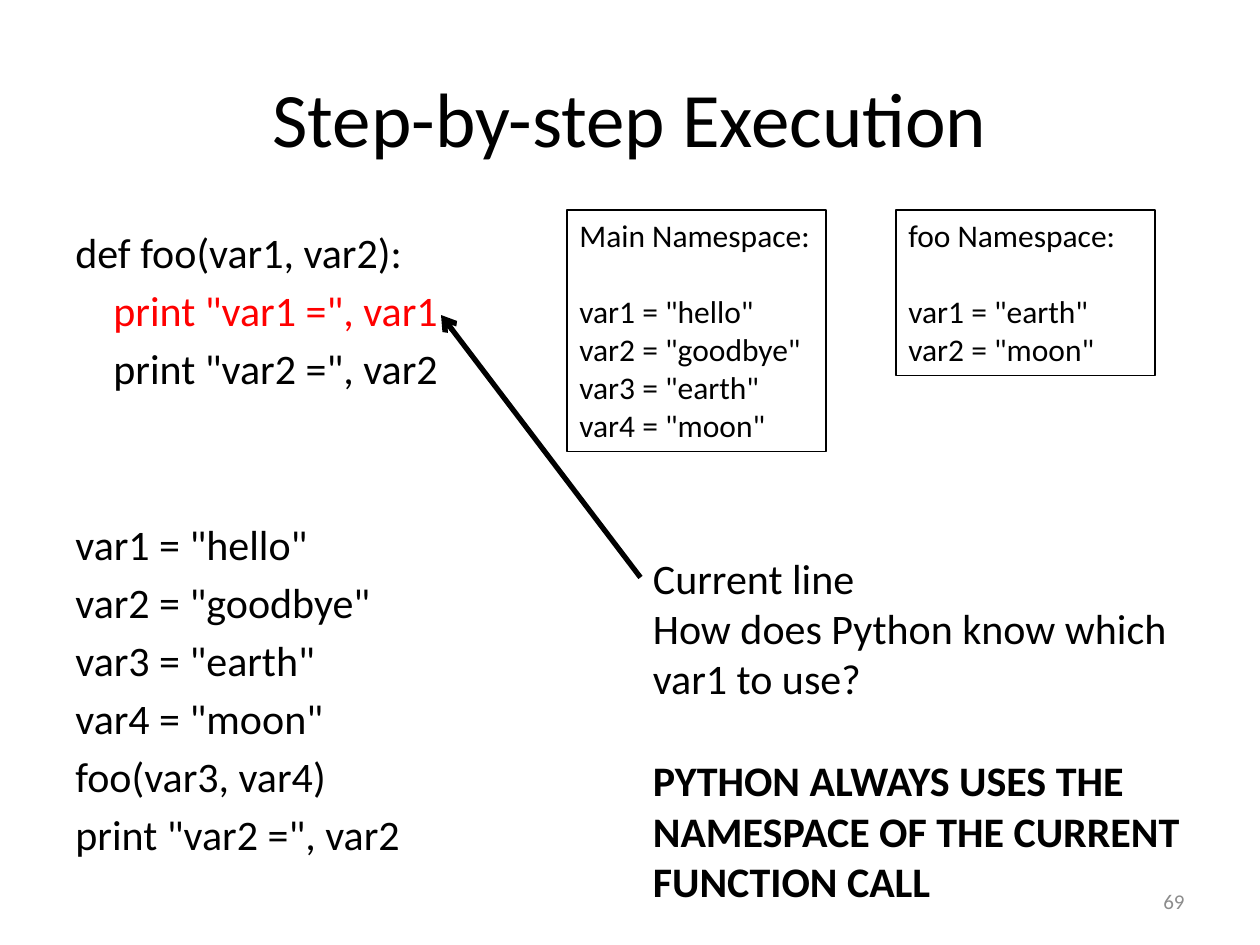
from lxml.etree import SubElement
from pptx import Presentation
from pptx.dml.color import RGBColor
from pptx.enum.shapes import MSO_CONNECTOR, MSO_SHAPE
from pptx.enum.text import MSO_ANCHOR, MSO_AUTO_SIZE, PP_ALIGN
from pptx.oxml.ns import qn
from pptx.util import Pt

COLOURS = {"text": "000000", "current": "FF0000", "number": "8C8C8C"}
FONT = "Calibri"
CODE_INDENT = 21.7
CODE_GAP = 4.4
SECTION_GAP = 71.3


def colour(name):
    return RGBColor.from_string(COLOURS[name])


def add_span(para, text, size, name="text", bold=False):
    span = para.add_run()
    span.text = text
    span.font.name = FONT
    span.font.size = Pt(size)
    span.font.bold = bold
    span.font.color.rgb = colour(name)


def add_para(frame, lines, size, gap=0, indent=0, name="text", bold=False,
             align=PP_ALIGN.LEFT):
    first = frame.paragraphs[0]
    para = frame.add_paragraph() if first.runs else first
    para.alignment = align
    para.space_before = Pt(gap)
    if indent:
        para._p.get_or_add_pPr().set("marL", str(Pt(indent)))
    for index, line in enumerate(lines):
        if index:
            para.add_line_break()
        add_span(para, line, size, name, bold)


def add_text_box(page, left, top, width, height, anchor=MSO_ANCHOR.TOP, wrap=True):
    box = page.shapes.add_textbox(Pt(left), Pt(top), Pt(width), Pt(height))
    frame = box.text_frame
    frame.word_wrap = wrap
    frame.vertical_anchor = anchor
    return frame


def add_label(page, place, text, size, name, align):
    frame = add_text_box(page, *place, anchor=MSO_ANCHOR.MIDDLE)
    add_para(frame, [text], size, name=name, align=align)


def add_code(page):
    frame = add_text_box(page, 36, 126, 240, 356.4)
    add_para(frame, ["def foo(var1, var2):"], 24)
    add_para(frame, ['print "var1 =", var1'], 24, CODE_GAP, CODE_INDENT, "current")
    add_para(frame, ['print "var2 =", var2'], 24, CODE_GAP, CODE_INDENT)
    main_lines = ['var1 = "hello"', 'var2 = "goodbye"', 'var3 = "earth"',
                  'var4 = "moon"', "foo(var3, var4)", 'print "var2 =", var2']
    for index, line in enumerate(main_lines):
        add_para(frame, [line], 24, CODE_GAP if index else SECTION_GAP)


def add_explanation(page):
    frame = add_text_box(page, 366, 312, 318, 211, wrap=False)
    frame.auto_size = MSO_AUTO_SIZE.SHAPE_TO_FIT_TEXT
    add_para(frame, ["Current line"], 24)
    add_para(frame, ["How does Python know which", "var1 to use?"], 24)
    add_para(frame, ["PYTHON ALWAYS USES THE", "NAMESPACE OF THE CURRENT",
                     "FUNCTION CALL"], 24, gap=29.3, bold=True)


def add_namespace(page, left, height, heading, variables):
    box = page.shapes.add_shape(MSO_SHAPE.RECTANGLE, Pt(left), Pt(120), Pt(148), Pt(height))
    box.shadow.inherit = False
    box.fill.background()
    box.line.color.rgb = colour("text")
    box.line.width = Pt(0.75)
    frame = box.text_frame
    frame.word_wrap = True
    frame.vertical_anchor = MSO_ANCHOR.TOP
    frame.auto_size = MSO_AUTO_SIZE.SHAPE_TO_FIT_TEXT
    add_para(frame, [heading], 18)
    for index, variable in enumerate(variables):
        add_para(frame, [variable], 18, gap=0 if index else 22)


def add_arrow(page, start, end):
    arrow = page.shapes.add_connector(
        MSO_CONNECTOR.STRAIGHT, *(Pt(value) for value in start + end))
    arrow.line.color.rgb = colour("text")
    arrow.line.width = Pt(3)
    SubElement(arrow.line._get_or_add_ln(), qn("a:tailEnd"), type="arrow")
    SubElement(arrow._element.spPr, qn("a:effectLst"))


def main():
    deck = Presentation()
    deck.slide_width, deck.slide_height = Pt(720), Pt(540)
    page = deck.slides.add_slide(deck.slide_layouts[6])
    add_label(page, (36, 21.6, 648, 90), "Step-by-step Execution", 44, "text",
              PP_ALIGN.CENTER)
    add_code(page)
    add_label(page, (516, 500.5, 168, 28.75), "69", 12, "number", PP_ALIGN.RIGHT)
    add_explanation(page)
    add_namespace(page, 324, 138, "Main Namespace:",
                  ['var1 = "hello"', 'var2 = "goodbye"', 'var3 = "earth"', 'var4 = "moon"'])
    add_arrow(page, (366, 330), (252, 180))
    add_namespace(page, 512, 94.5, "foo Namespace:", ['var1 = "earth"', 'var2 = "moon"'])
    deck.save("out.pptx")


if __name__ == "__main__":
    main()
